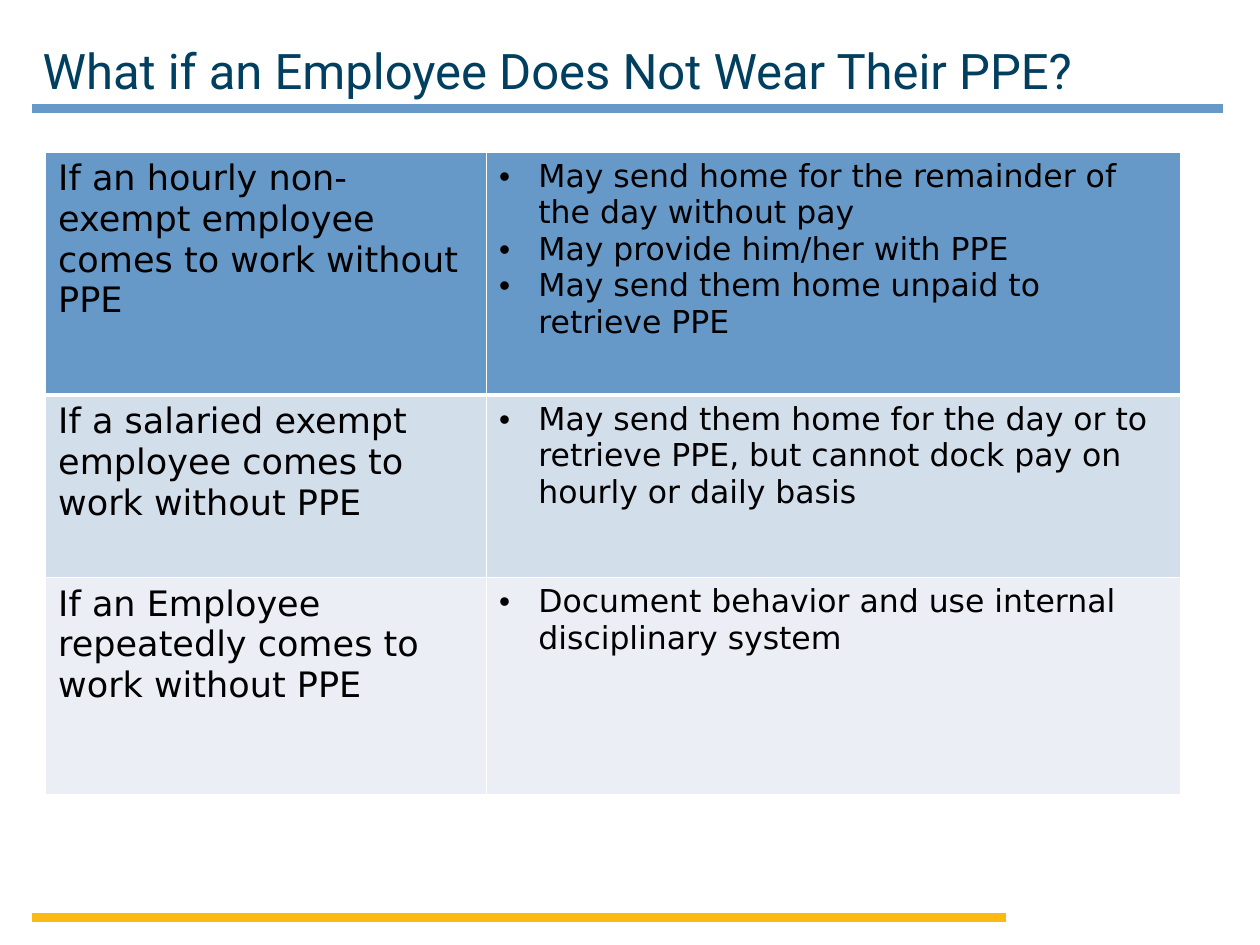
from lxml.etree import SubElement
from pptx import Presentation
from pptx.dml.color import RGBColor
from pptx.enum.shapes import MSO_CONNECTOR
from pptx.enum.text import MSO_ANCHOR, MSO_AUTO_SIZE, PP_ALIGN
from pptx.oxml.ns import qn
from pptx.util import Cm, Pt

NAVY = RGBColor(0x00, 0x3F, 0x5F)
BLUE = RGBColor(0x67, 0x99, 0xC8)
GOLD = RGBColor(0xFD, 0xB9, 0x13)
PALE_BLUE = RGBColor(0xD3, 0xDE, 0xEB)
PALE_GREY = RGBColor(0xEB, 0xEF, 0xF5)
BLACK = RGBColor(0x00, 0x00, 0x00)
WHITE = RGBColor(0xFF, 0xFF, 0xFF)

# Each row: height in cm, fill, situation, responses
ROWS = [
    (4.9, BLUE, "If an hourly non-exempt employee comes to work without PPE",
     ["May send home for the remainder of the day without pay",
      "May provide him/her with PPE",
      "May send them home unpaid to retrieve PPE"]),
    (3.68, PALE_BLUE, "If a salaried exempt employee comes to work without PPE",
     ["May send them home for the day or to retrieve PPE, "
      "but cannot dock pay on hourly or daily basis"]),
    (4.39, PALE_GREY, "If an Employee repeatedly comes to work without PPE",
     ["Document behavior and use internal disciplinary system"]),
]


def write(para, text, name, size, color):
    span = para.add_run()
    span.text = text
    for key, value in {"name": name, "size": Pt(size), "bold": False}.items():
        setattr(span.font, key, value)
    span.font.color.rgb = color


def set_borders(cell, widths):
    """Draw white borders; widths maps L, R, T and B to points."""
    properties = cell._tc.get_or_add_tcPr()
    for side, width in widths.items():
        line = SubElement(properties, qn(f"a:ln{side}"), w=str(Pt(width)))
        fill = SubElement(line, qn("a:solidFill"))
        SubElement(fill, qn("a:srgbClr"), val=str(WHITE))


deck = Presentation()
deck.slide_width, deck.slide_height = Cm(25.4), Cm(19.05)
page = deck.slides.add_slide(deck.slide_layouts[5])

# Rules under the title and at the foot
for right, y, color in [(24.66, 2.19, BLUE), (20.27, 18.5, GOLD)]:
    rule = page.shapes.add_connector(
        MSO_CONNECTOR.STRAIGHT, Cm(0.64), Cm(y), Cm(right), Cm(y))
    rule.line.color.rgb = color
    rule.line.width = Pt(5)
    SubElement(rule._element.spPr, qn("a:effectLst"))

# Title
title = page.shapes.title
place = {"left": 0.61, "top": 0.89, "width": 23.52, "height": 1.14}
for key, value in place.items():
    setattr(title, key, Cm(value))
frame_format = {
    "margin_left": Cm(0.25), "margin_right": 0, "margin_top": 0,
    "margin_bottom": 0, "vertical_anchor": MSO_ANCHOR.MIDDLE,
    "word_wrap": True, "auto_size": MSO_AUTO_SIZE.NONE,
}
for key, value in frame_format.items():
    setattr(title.text_frame, key, value)
para = title.text_frame.paragraphs[0]
para.alignment = PP_ALIGN.LEFT
para.line_spacing = 0.95
write(para, "What if an Employee Does Not Wear Their PPE?", "Roboto", 28, NAVY)

# Table of situations and responses
table = page.shapes.add_table(
    len(ROWS), 2, Cm(0.92), Cm(3.06), Cm(22.89), Cm(12.97)).table
for column, width in zip(table.columns, (8.89, 14)):
    column.width = Cm(width)

for index, (height, color, situation, responses) in enumerate(ROWS):
    table.rows[index].height = Cm(height)
    widths = {"L": 1, "R": 1,
              "T": 3 if index == 1 else 1, "B": 3 if index == 0 else 1}
    for cell in table.rows[index].cells:
        set_borders(cell, widths)
        cell.fill.solid()
        cell.fill.fore_color.rgb = color

    situation_cell, response_cell = table.rows[index].cells
    write(situation_cell.text_frame.paragraphs[0], situation,
          "DejaVu Sans", 20, BLACK)

    frame = response_cell.text_frame
    for number, response in enumerate(responses):
        para = frame.add_paragraph() if number else frame.paragraphs[0]
        properties = para._p.get_or_add_pPr()
        properties.set("marL", str(Cm(0.79)))
        properties.set("indent", str(-Cm(0.79)))
        SubElement(properties, qn("a:buFont"), typeface="Arial")
        SubElement(properties, qn("a:buChar"), char="•")
        write(para, response, "DejaVu Sans", 18, BLACK)

deck.save("out.pptx")
